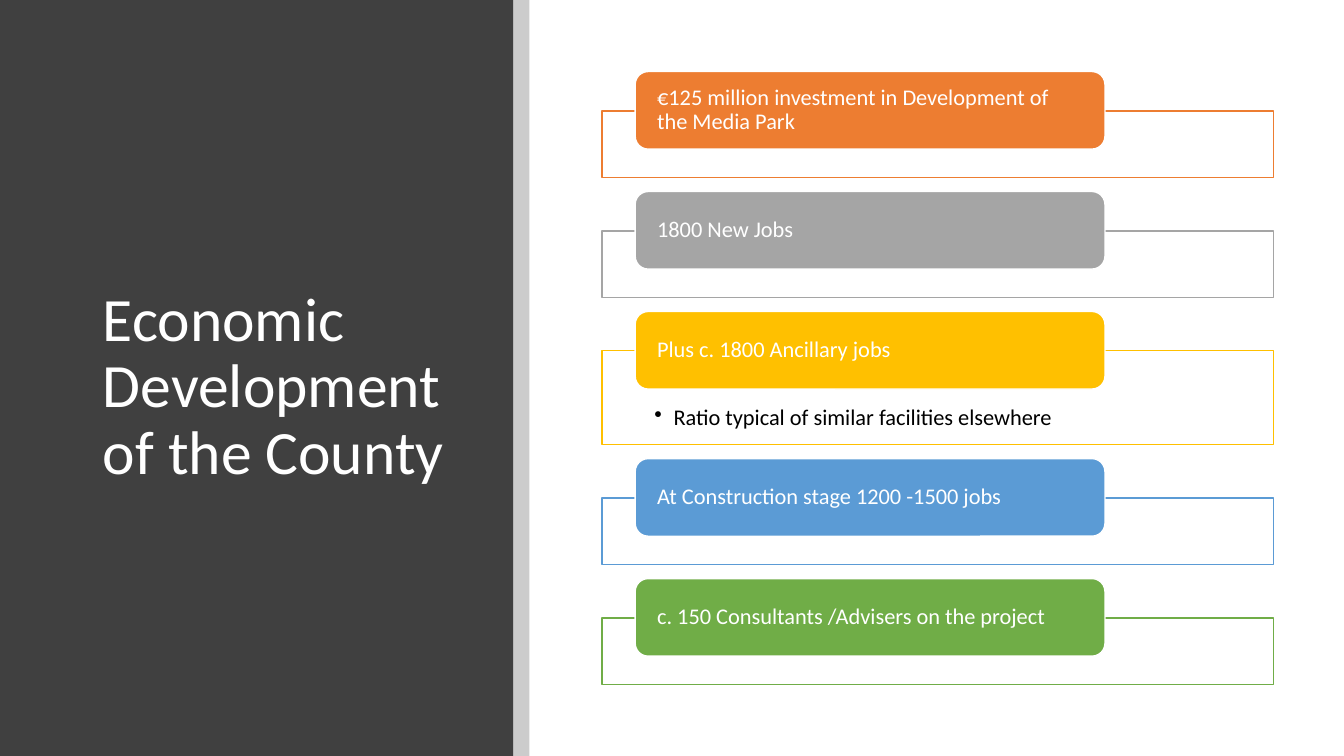
from pptx import Presentation
from pptx.dml.color import RGBColor
from pptx.enum import shapes, text
from pptx.oxml import parse_xml
from pptx.oxml.ns import nsdecls
from pptx.util import Inches, Pt

WHITE = RGBColor(0xFF, 0xFF, 0xFF)
BLACK = RGBColor(0, 0, 0)
DARK = RGBColor(0x40, 0x40, 0x40)
ORANGE = RGBColor(0xED, 0x7D, 0x31)
GRAY = RGBColor(0xA5, 0xA5, 0xA5)
GOLD = RGBColor(0xFF, 0xC0, 0x00)
BLUE = RGBColor(0x5B, 0x9B, 0xD5)
GREEN = RGBColor(0x70, 0xAD, 0x47)

TITLE = "Economic Development of the County"
POINTS = [
    ("€125 million investment in Development of the Media Park", ORANGE, ""),
    ("1800 New Jobs", GRAY, ""),
    ("Plus c. 1800 Ancillary jobs", GOLD,
     "Ratio typical of similar facilities elsewhere"),
    ("At Construction stage 1200 -1500 jobs", BLUE, ""),
    ("c. 150 Consultants /Advisers on the project", GREEN, ""),
]
FONT = "Calibri"
TOP, GAP, RISE = 1.1, 0.53, 0.39
SHORT, TALL = 0.66, 0.93


def add_box(slide, kind, at, fill, line=None, alpha=100):
    """Add a flat shape with a solid fill and an optional outline."""
    box = slide.shapes.add_shape(kind, *map(Inches, at))
    box.shadow.inherit = False
    box.fill.solid()
    box.fill.fore_color.rgb = fill
    if alpha < 100:
        color = box.fill._xPr.solidFill[0]
        color.append(parse_xml(
            f'<a:alpha {nsdecls("a")} val="{alpha * 1000}"/>'))
    if line is None:
        box.line.fill.background()
    else:
        box.line.color.rgb = line
        box.line.width = Pt(1)
    return box


def write(box, words, size, color, pads, anchor, after=0):
    """Put one left-aligned paragraph into a shape and return it."""
    frame = box.text_frame
    frame.word_wrap = True
    frame.auto_size = text.MSO_AUTO_SIZE.NONE
    frame.vertical_anchor = anchor
    (frame.margin_left, frame.margin_top,
     frame.margin_right, frame.margin_bottom) = map(Inches, pads)
    frame.text = words
    para = frame.paragraphs[0]
    para.alignment = text.PP_ALIGN.LEFT
    para.line_spacing = 0.9
    para.space_after = Pt(after)
    para.font.name = FONT
    para.font.size = Pt(size)
    para.font.color.rgb = color
    return para


def add_bullet(para):
    """Give a paragraph a round bullet with a hanging indent."""
    props = para._p.get_or_add_pPr()
    props.set("marL", str(Inches(0.19)))
    props.set("indent", str(Inches(-0.19)))
    mark = parse_xml(f'<a:buChar {nsdecls("a")} char="•"/>')
    props.insert_element_before(mark, "a:tabLst", "a:defRPr", "a:extLst")


def add_points(slide):
    """Stack the framed points down the right side."""
    rect, pill = shapes.MSO_SHAPE.RECTANGLE, shapes.MSO_SHAPE.ROUNDED_RECTANGLE
    top = TOP
    for words, color, note in POINTS:
        high = TALL if note else SHORT
        frame = add_box(slide, rect, (5.97, top, 6.66, high), WHITE, color, 90)
        if note:
            add_bullet(write(frame, note, 16, BLACK, (0.52, 0.55, 0.52, 0.12),
                             text.MSO_ANCHOR.TOP, 2.4))
        label = add_box(slide, pill, (6.3, top - RISE, 4.66, 0.77),
                        color, WHITE)
        write(label, words, 16, WHITE, (0.18, 0, 0.18, 0),
              text.MSO_ANCHOR.MIDDLE, 5.6)
        top += high + GAP


def main():
    """Build the slide and save it."""
    deck = Presentation()
    deck.slide_width, deck.slide_height = Inches(13.33), Inches(7.5)
    slide = deck.slides.add_slide(deck.slide_layouts[5])
    rect = shapes.MSO_SHAPE.RECTANGLE
    panel = add_box(slide, rect, (0, 0, 5.09, 7.5), DARK)
    title = slide.shapes.title
    title._element.addprevious(panel._element)
    title.left, title.top, title.width, title.height = map(
        Inches, (0.92, 0.89, 3.65, 5.91))
    write(title, TITLE, 44, WHITE, (0.1, 0.05, 0.1, 0.05),
          text.MSO_ANCHOR.MIDDLE)
    add_box(slide, rect, (5.09, 0, 0.16, 7.5), BLACK, alpha=20)
    add_points(slide)
    deck.save("out.pptx")


if __name__ == "__main__":
    main()
